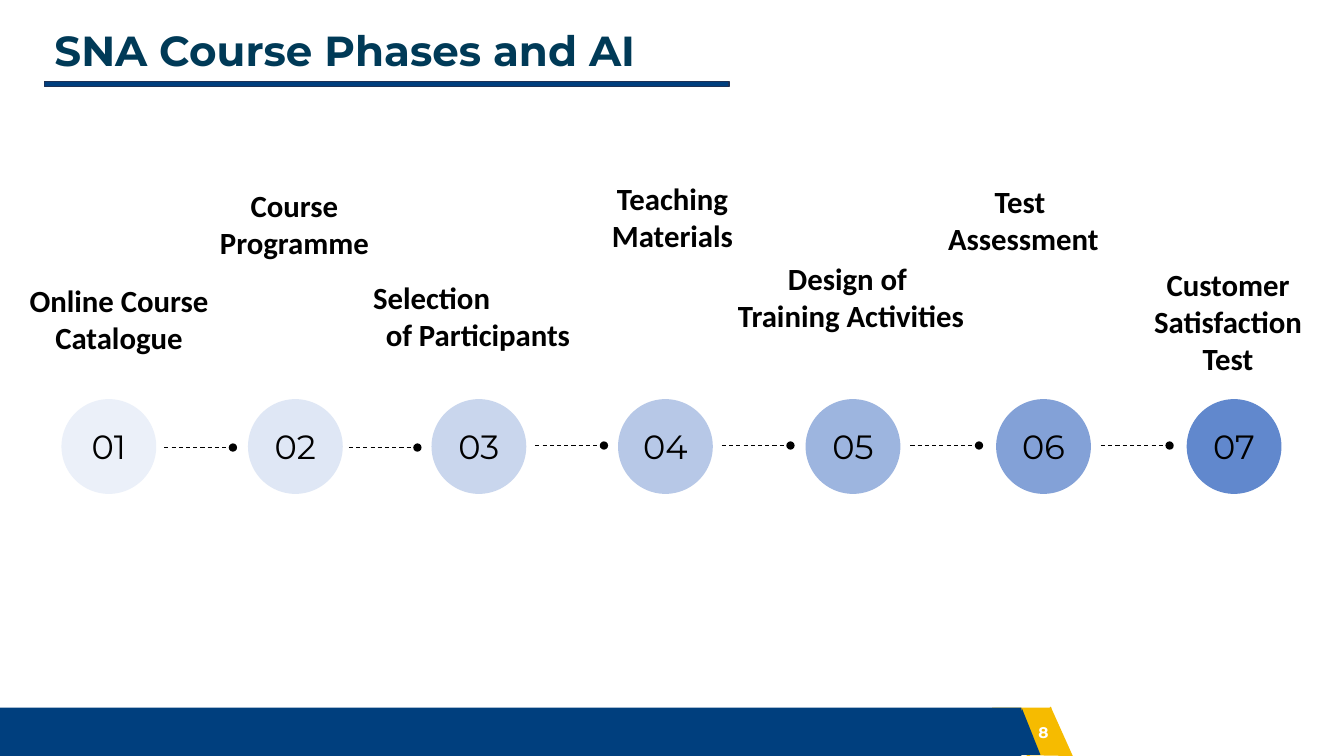
from lxml import etree
from pptx import Presentation
from pptx.dml.color import RGBColor
from pptx.enum.dml import MSO_LINE
from pptx.enum.shapes import MSO_CONNECTOR, MSO_SHAPE
from pptx.enum.text import MSO_ANCHOR, MSO_AUTO_SIZE, PP_ALIGN
from pptx.oxml.ns import qn
from pptx.util import Pt

PX = 9144
TITLE_ONLY = 5
RECT, OVAL = MSO_SHAPE.RECTANGLE, MSO_SHAPE.OVAL
TRIANGLE = MSO_SHAPE.ISOSCELES_TRIANGLE
STRAIGHT, DASH = MSO_CONNECTOR.STRAIGHT, MSO_LINE.DASH
TOP, MIDDLE, BOTTOM = MSO_ANCHOR.TOP, MSO_ANCHOR.MIDDLE, MSO_ANCHOR.BOTTOM
LEFT, CENTER = PP_ALIGN.LEFT, PP_ALIGN.CENTER
NO_FIT = MSO_AUTO_SIZE.NONE

COLORS = {
    "navy": "003F7E", "gold": "F6BB00", "title": "003A57", "edge": "1E3256",
    "black": "000000", "white": "FFFFFF",
}
FORMATS = {
    "title": {"name": "Montserrat", "size": Pt(30), "bold": True, "color": "title"},
    "page": {"name": "Montserrat", "size": Pt(11), "bold": True, "color": "white"},
    "number": {"name": "Montserrat", "size": Pt(24), "bold": False, "color": "black"},
    "label": {"name": "Calibri", "size": Pt(22), "bold": True, "color": "black"},
}
CIRCLE = 94
LINK = 68
PHASES = [
    (0, "EBF0F9", 102, 48),
    (185, "DFE7F5", 100, 48),
    (367, "C9D6ED", 103, 46),
    (552, "B7C8E7", 103, 46),
    (738, "9DB5DF", 104, 46),
    (927, "83A1D7", 104, 46),
    (1116, "6188CD", None, None),
]
LABELS = [
    ((-34, -90, 182), [("Online Course Catalogue", CENTER)]),
    ((153, -184, 156), [("Course Programme", CENTER)]),
    ((309, -93, 208), [("Selection", LEFT), ("of Participants", CENTER)]),
    ((528, -191, 156), [("Teaching Materials", CENTER)]),
    ((662, -112, 242), [("Design of ", CENTER), ("Training Activities", CENTER)]),
    ((850, -188, 208), [("Test ", CENTER), ("Assessment", CENTER)]),
    ((1070, -69, 174), [("Customer Satisfaction Test", CENTER)]),
]


def rgb(name):
    return RGBColor.from_string(COLORS.get(name, name))


def emu(*lengths):
    return [n * PX for n in lengths]


def paint(sp, fill, edge=None):
    sp.shadow.inherit = False
    sp.fill.solid()
    sp.fill.fore_color.rgb = rgb(fill)
    if edge:
        sp.line.color.rgb = rgb(edge)
        sp.line.width = Pt(1)
    else:
        sp.line.fill.background()


def add_block(s, kind, box, fill, edge=None):
    sp = s.shapes.add_shape(kind, *emu(*box))
    paint(sp, fill, edge)
    return sp


def write(sp, lines, style, anchor, inset=0, wrap=True):
    tf = sp.text_frame
    frame = {"auto_size": NO_FIT, "word_wrap": wrap, "vertical_anchor": anchor}
    for side in ("left", "top", "right", "bottom"):
        frame["margin_" + side] = inset * PX
    for key, value in frame.items():
        setattr(tf, key, value)
    for i, (text, align) in enumerate(lines):
        p = tf.add_paragraph() if i else tf.paragraphs[0]
        p.alignment = align
        r = p.add_run()
        r.text = text
        for key, value in FORMATS[style].items():
            if key == "color":
                r.font.color.rgb = rgb(value)
            else:
                setattr(r.font, key, value)
    return tf


def add_footer(s, x, y, w, h):
    tab = x + w
    for dy in (0, 1):
        sp = add_block(s, TRIANGLE, (tab - 29, y + dy, 59, 49), "gold")
        sp.rotation = 180
        sp.adjustments[0] = 0.386
        if dy == 0:
            fb = s.shapes.build_freeform(tab - 8, y + 47, scale=PX)
            fb.add_line_segments([(tab + 29, y - 1), (tab + 51, y + 48)])
            paint(fb.convert_to_shape(), "gold")
    add_block(s, RECT, (x, y, w, h), "navy")
    sp = add_block(s, TRIANGLE, (tab - 15, y + 1, 34, 46), "navy")
    sp.adjustments[0] = 0.462
    sp = s.shapes.add_textbox(*emu(tab + 7, y + 10, 59, 40))
    write(sp, [("8", LEFT)], "page", TOP, inset=10).margin_top = 5 * PX


def add_title(s, x, y, w, h):
    sp = s.shapes.title
    sp.left, sp.top, sp.width, sp.height = emu(x, y, w, h)
    tf = write(sp, [("SNA Course Phases and AI", LEFT)], "title", TOP, inset=10)
    tf.paragraphs[0].line_spacing = 1.07
    add_block(s, RECT, (x, y + 70, 679, 5), "navy", "edge")


def add_link(s, x, y):
    sp = s.shapes.add_connector(STRAIGHT, *emu(x, y, x + LINK, y))
    sp.line.color.rgb = rgb("black")
    sp.line.width = Pt(0.75)
    sp.line.dash_style = DASH
    etree.SubElement(sp.line._get_or_add_ln(), qn("a:tailEnd"), type="oval")
    etree.SubElement(sp._element.spPr, qn("a:effectLst"))


def add_timeline(s, x, y):
    for i, (dx, fill, gap, dy) in enumerate(PHASES, 1):
        sp = add_block(s, OVAL, (x + dx, y, CIRCLE, CIRCLE), fill)
        write(sp, [(f"{i:02d}", CENTER)], "number", MIDDLE, wrap=False)
        if gap:
            add_link(s, x + dx + gap, y + dy)
    for (dx, dy, w), lines in LABELS:
        sp = s.shapes.add_textbox(*emu(x + dx, y + dy, w, 47))
        write(sp, lines, "label", BOTTOM)


def main():
    prs = Presentation()
    prs.slide_width, prs.slide_height = emu(1333, 750)
    s = prs.slides.add_slide(prs.slide_layouts[TITLE_ONLY])
    add_footer(s, 0, 702, 1013, 48)
    add_title(s, 44, 11, 1280, 58)
    add_timeline(s, 61, 396)
    prs.save("out.pptx")


if __name__ == "__main__":
    main()
